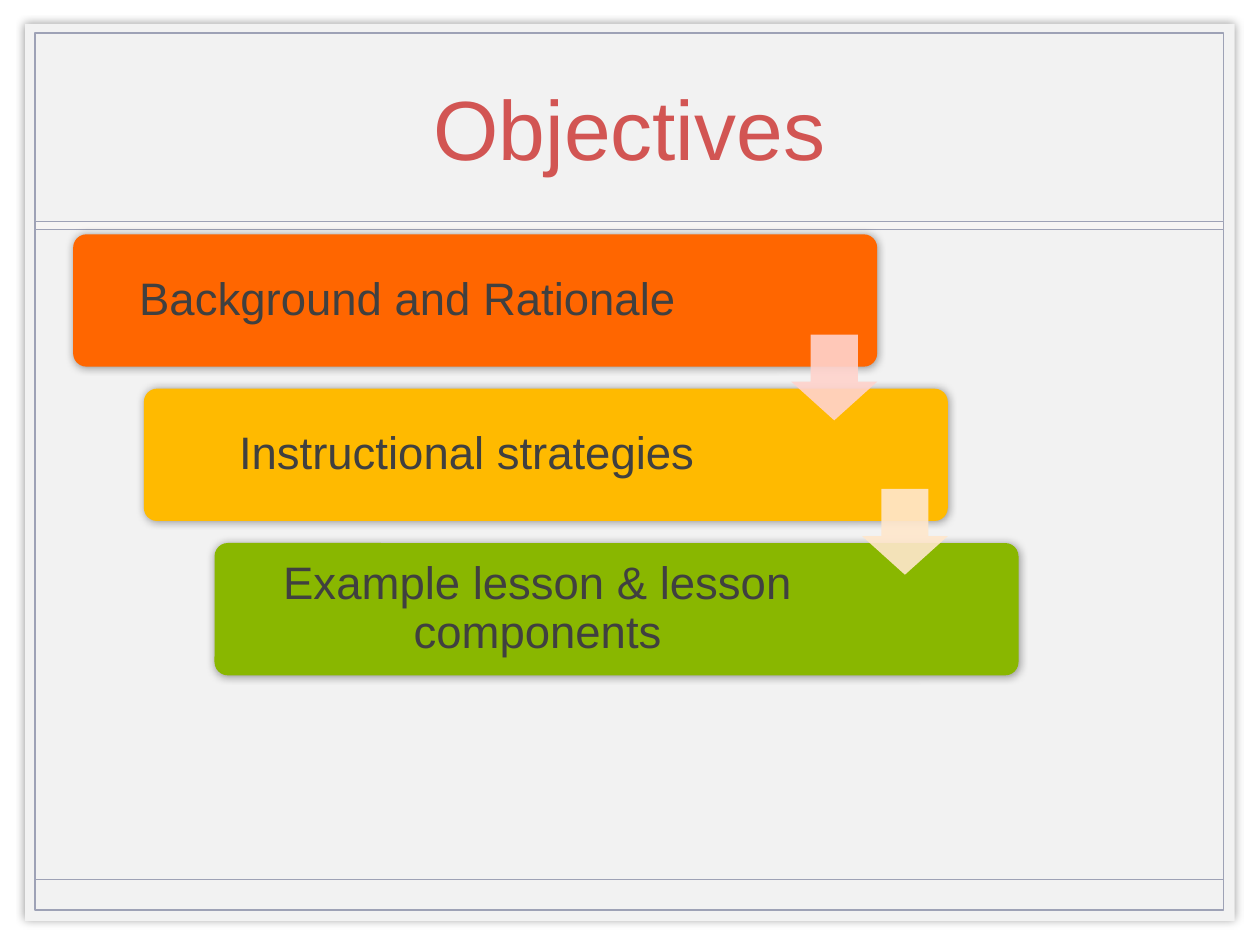
from dataclasses import dataclass
from typing import Optional

from lxml.etree import SubElement
from pptx import Presentation
from pptx.dml.color import RGBColor
from pptx.enum.shapes import MSO_CONNECTOR, MSO_SHAPE
from pptx.enum.text import MSO_ANCHOR, PP_ALIGN
from pptx.oxml.ns import qn
from pptx.util import Pt

COLORS = {
    "panel": "F2F2F2", "band": "F7F5F4", "frame": "9EA2B6", "title": "D25553",
    "text": "404040", "shadow": "000000", "orange": "FF6600", "yellow": "FFBA00",
    "green": "89B700", "pink": "FFD3CC", "peach": "FFE7CC",
}
FONT = "Arial"
STEP_LEFT, STEP_TOP, STEP_WIDTH, STEP_HEIGHT = 41.8, 133.9, 459.4, 75.6
SHIFT_X, SHIFT_Y = 40.4, 88.2
ARROW_LEFT, ARROW_TOP, ARROW_SIZE = 452.2, 191.2, 49
LABEL_INSET = 2.2


@dataclass
class Box:
    left: float
    top: float
    width: float
    height: float


@dataclass
class Step:
    label: str
    color: str
    label_width: float
    arrow_color: Optional[str] = None


STEPS = [
    Step("Background and Rationale", "orange", 378, "pink"),
    Step("Instructional strategies", "yellow", 365, "peach"),
    Step("Example lesson & lesson components", "green", 365),
]
FRAME = Box(20.2, 18.9, 679, 501.1)


def rgb(name: str) -> RGBColor:
    """Return the named palette colour."""
    return RGBColor.from_string(COLORS[name])


def add_box(slide, kind, box: Box, fill: Optional[str] = None,
            line: Optional[str] = None, line_width: float = 1):
    """Draw a preset shape without a shadow."""
    shape = slide.shapes.add_shape(
        kind, Pt(box.left), Pt(box.top), Pt(box.width), Pt(box.height))
    shape.shadow.inherit = False
    if fill:
        shape.fill.solid()
        shape.fill.fore_color.rgb = rgb(fill)
    else:
        shape.fill.background()
    if line:
        shape.line.color.rgb = rgb(line)
        shape.line.width = Pt(line_width)
    else:
        shape.line.fill.background()
    return shape


def add_glow_shadow(shape) -> None:
    """Give the shape a soft shadow on all sides."""
    effects = shape._element.spPr.find(qn("a:effectLst"))
    shadow = SubElement(effects, qn("a:outerShdw"), blurRad=str(Pt(5)), dist="0",
                        dir="0", algn="ctr", rotWithShape="0")
    color = SubElement(shadow, qn("a:srgbClr"), val=COLORS["shadow"])
    SubElement(color, qn("a:alpha"), val="40000")


def add_text(slide, box: Box, text: str, size: float, color: str,
             margin: float, line_spacing: float = 1.0) -> None:
    """Write centred text in the middle of a box."""
    shape = slide.shapes.add_textbox(
        Pt(box.left), Pt(box.top), Pt(box.width), Pt(box.height))
    frame = shape.text_frame
    frame.text = text
    frame.word_wrap = True
    frame.vertical_anchor = MSO_ANCHOR.MIDDLE
    frame.margin_left = frame.margin_right = Pt(margin)
    frame.margin_top = frame.margin_bottom = Pt(margin)
    paragraph = frame.paragraphs[0]
    paragraph.alignment = PP_ALIGN.CENTER
    paragraph.line_spacing = line_spacing
    font = paragraph.runs[0].font
    font.name = FONT
    font.size = Pt(size)
    font.color.rgb = rgb(color)


def add_frame(slide) -> None:
    """Draw the panel, its border, the footer rule and the title band."""
    panel = add_box(slide, MSO_SHAPE.RECTANGLE, Box(14.4, 13.7, 691.2, 512.6), "panel")
    add_glow_shadow(panel)
    add_box(slide, MSO_SHAPE.RECTANGLE, FRAME, line="frame")
    rule = slide.shapes.add_connector(
        MSO_CONNECTOR.STRAIGHT, Pt(FRAME.left), Pt(502.6),
        Pt(FRAME.left + FRAME.width), Pt(502.6))
    rule.line.color.rgb = rgb("frame")
    rule.line.width = Pt(1)
    SubElement(rule._element.spPr, qn("a:effectLst"))
    band = Box(FRAME.left, 126.3, FRAME.width, 5)
    add_box(slide, MSO_SHAPE.RECTANGLE, band, "band", "frame", 0.25)


def add_step(slide, index: int, step: Step) -> None:
    """Draw one rounded step and its label."""
    left = STEP_LEFT + index * SHIFT_X
    top = STEP_TOP + index * SHIFT_Y
    card = add_box(slide, MSO_SHAPE.ROUNDED_RECTANGLE,
                   Box(left, top, STEP_WIDTH, STEP_HEIGHT), step.color)
    card.adjustments[0] = 0.1
    add_glow_shadow(card)
    label_box = Box(left + LABEL_INSET, top + LABEL_INSET,
                    step.label_width, STEP_HEIGHT - 2 * LABEL_INSET)
    add_text(slide, label_box, step.label, 26, "text", 7.8, 0.9)


def add_arrow(slide, index: int, color: str) -> None:
    """Draw the translucent arrow leading to the next step."""
    box = Box(ARROW_LEFT + index * SHIFT_X, ARROW_TOP + index * SHIFT_Y,
              ARROW_SIZE, ARROW_SIZE)
    arrow = add_box(slide, MSO_SHAPE.DOWN_ARROW, box, color)
    arrow.adjustments[0] = 0.55
    arrow.adjustments[1] = 0.45
    fill_color = arrow._element.spPr.find(qn("a:solidFill")).find(qn("a:srgbClr"))
    SubElement(fill_color, qn("a:alpha"), val="90000")


def main() -> None:
    """Build the objectives slide."""
    presentation = Presentation()
    presentation.slide_width, presentation.slide_height = Pt(720), Pt(540)
    slide = presentation.slides.add_slide(presentation.slide_layouts[6])
    add_frame(slide)
    add_text(slide, Box(70.6, 19.4, 578.2, 105.8), "Objectives", 48, "title", 3.6)
    for index, step in enumerate(STEPS):
        add_step(slide, index, step)
    for index, step in enumerate(STEPS):
        if step.arrow_color:
            add_arrow(slide, index, step.arrow_color)
    presentation.save("out.pptx")


if __name__ == "__main__":
    main()
